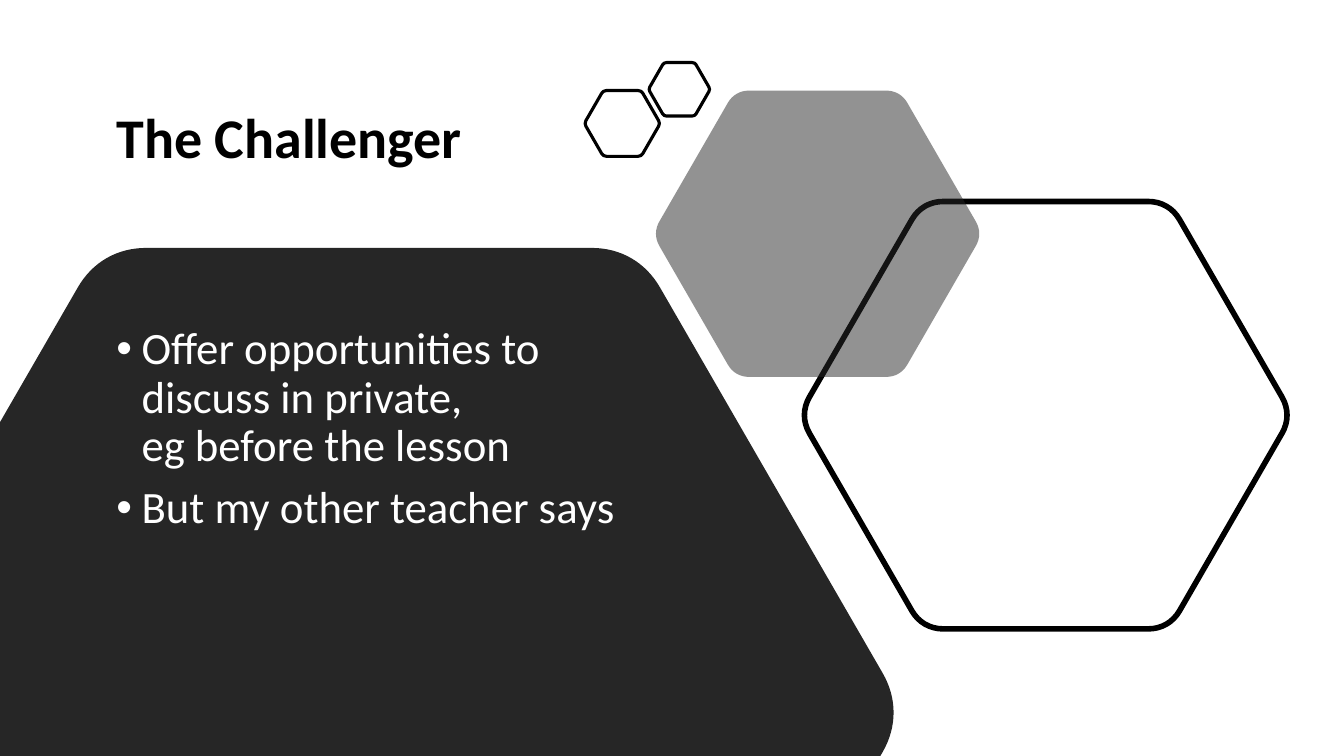
from math import cos, hypot, radians, sin, sqrt

from lxml import etree
from pptx import Presentation
from pptx.dml.color import RGBColor
from pptx.enum.text import MSO_ANCHOR, MSO_AUTO_SIZE, PP_ALIGN
from pptx.oxml.ns import qn
from pptx.util import Pt

LEFT = PP_ALIGN.LEFT
MIDDLE, TOP = MSO_ANCHOR.MIDDLE, MSO_ANCHOR.TOP
NO_AUTOFIT = MSO_AUTO_SIZE.NONE

WIDTH, HEIGHT = 960, 540
TITLE_ONLY = 5
TEXT_LEFT = 76
FONT = "Calibri"
COLORS = {"black": "000000", "charcoal": "262626", "white": "FFFFFF"}
ROUNDING = 0.085  # corner cut as a share of the hexagon side
HANDLE = 0.64     # how far curve handles reach towards the vertex


def color(name):
    return RGBColor.from_string(COLORS[name])


def hexagon_vertices(center_x, center_y, height):
    """Clockwise from the top left vertex."""
    radius = height / sqrt(3)
    angles = [radians(240 + 60 * i) for i in range(6)]
    return [(center_x + radius * cos(a), center_y + radius * sin(a)) for a in angles]


def towards(start, end, distance):
    share = distance / hypot(end[0] - start[0], end[1] - start[1])
    return tuple(a + (b - a) * share for a, b in zip(start, end))


def corner_controls(before, vertex, after, cut):
    """The four control points of the curve that replaces a vertex."""
    handle = cut * (1 - HANDLE)
    return [towards(vertex, before, cut), towards(vertex, before, handle),
            towards(vertex, after, handle), towards(vertex, after, cut)]


def curve_corners(shape, count):
    """Turn the segments along each corner's control points into one curve."""
    segments = list(shape._element.iter(qn("a:lnTo")))
    for corner in range(count):
        legs = segments[4 * corner:4 * corner + 3]
        curve = etree.Element(qn("a:cubicBezTo"))
        legs[0].addprevious(curve)
        for leg in legs:
            curve.append(leg[0])
            leg.getparent().remove(leg)


def add_rounded_polygon(slide, vertices, cut, rounded=6, fill=None, line_width=None):
    """Draw a polygon whose first `rounded` vertices are rounded."""
    points = []
    for i, vertex in enumerate(vertices):
        if i < rounded:
            after = vertices[(i + 1) % len(vertices)]
            points += corner_controls(vertices[i - 1], vertex, after, cut)
        else:
            points.append(vertex)
    points = [(Pt(x), Pt(y)) for x, y in points]
    builder = slide.shapes.build_freeform(*points[0])
    builder.add_line_segments(points[1:], close=True)
    shape = builder.convert_to_shape()
    curve_corners(shape, rounded)
    shape.shadow.inherit = False
    if fill:
        shape.fill.solid()
        shape.fill.fore_color.rgb = color(fill)
    else:
        shape.fill.background()
    if line_width:
        shape.line.color.rgb = color("black")
        shape.line.width = Pt(line_width)
    else:
        shape.line.fill.background()
    return shape


def add_hexagon(slide, center_x, center_y, height, **style):
    vertices = hexagon_vertices(center_x, center_y, height)
    return add_rounded_polygon(slide, vertices, ROUNDING * height / sqrt(3), **style)


def add_text_panel(slide, center_x, center_y, height):
    """Large hexagon cut off at the left and bottom slide edges."""
    top_left, top_right, right = hexagon_vertices(center_x, center_y, height)[:3]
    bottom_x = right[0] - (HEIGHT - right[1]) / sqrt(3)
    left_y = top_left[1] + top_left[0] * sqrt(3)
    vertices = [top_left, top_right, right, (bottom_x, HEIGHT), (0, HEIGHT), (0, left_y)]
    add_rounded_polygon(slide, vertices, ROUNDING * height / sqrt(3),
                        rounded=3, fill="charcoal")


def set_transparency(shape, opacity):
    fill_color = shape.fill._xPr.find(qn("a:solidFill"))[0]
    etree.SubElement(fill_color, qn("a:alpha")).set("val", str(opacity * 1000))


def format_paragraph(paragraph, size, color_name, bold=False):
    paragraph.alignment = LEFT
    paragraph.line_spacing = 0.9
    paragraph.font.name = FONT
    paragraph.font.size = Pt(size)
    paragraph.font.bold = bold
    paragraph.font.color.rgb = color(color_name)


def set_title(slide, text):
    title = slide.shapes.title
    title.left, title.top, title.width, title.height = Pt(TEXT_LEFT), Pt(35.3), Pt(337), Pt(129.6)
    frame = title.text_frame
    frame.text = text
    frame.word_wrap = True
    frame.auto_size = NO_AUTOFIT
    frame.vertical_anchor = MIDDLE
    format_paragraph(frame.paragraphs[0], 40, "black", bold=True)


def add_bullets(slide, items):
    """Each item is a list of lines within one bullet."""
    box = slide.shapes.add_textbox(Pt(TEXT_LEFT), Pt(229.3), Pt(392.4), Pt(243.4))
    frame = box.text_frame
    frame.word_wrap = True
    frame.vertical_anchor = TOP
    for i, lines in enumerate(items):
        paragraph = frame.add_paragraph() if i else frame.paragraphs[0]
        for j, line in enumerate(lines):
            if j:
                paragraph.add_line_break()
            paragraph.add_run().text = line
        format_paragraph(paragraph, 32, "white")
        paragraph.space_before = Pt(10)
        properties = paragraph._p.get_or_add_pPr()
        properties.set("marL", str(Pt(18)))
        properties.set("indent", str(-Pt(18)))
        text_defaults = properties.find(qn("a:defRPr"))
        text_defaults.addprevious(etree.Element(qn("a:buFont"), typeface="Arial"))
        text_defaults.addprevious(etree.Element(qn("a:buChar"), char="•"))


def main():
    presentation = Presentation()
    presentation.slide_width, presentation.slide_height = Pt(WIDTH), Pt(HEIGHT)
    slide = presentation.slides.add_slide(presentation.slide_layouts[TITLE_ONLY])
    set_title(slide, "The Challenger")

    # Hexagons
    add_text_panel(slide, 263.5, 509, 663.8)
    add_hexagon(slide, 747, 296.6, 305.3, line_width=4)
    set_transparency(add_hexagon(slide, 584, 167, 204.5, fill="charcoal"), 50)
    small_hexagons = [add_hexagon(slide, *place, line_width=2.25)
                      for place in ((444.5, 88.2, 47), (485.3, 63.8, 38.2))]
    slide.shapes.add_group_shape(small_hexagons)

    # Advice
    add_bullets(slide, [
        ["Offer opportunities to discuss in private, ", "eg before the lesson"],
        ["But my other teacher says"],
    ])
    presentation.save("out.pptx")


if __name__ == "__main__":
    main()
